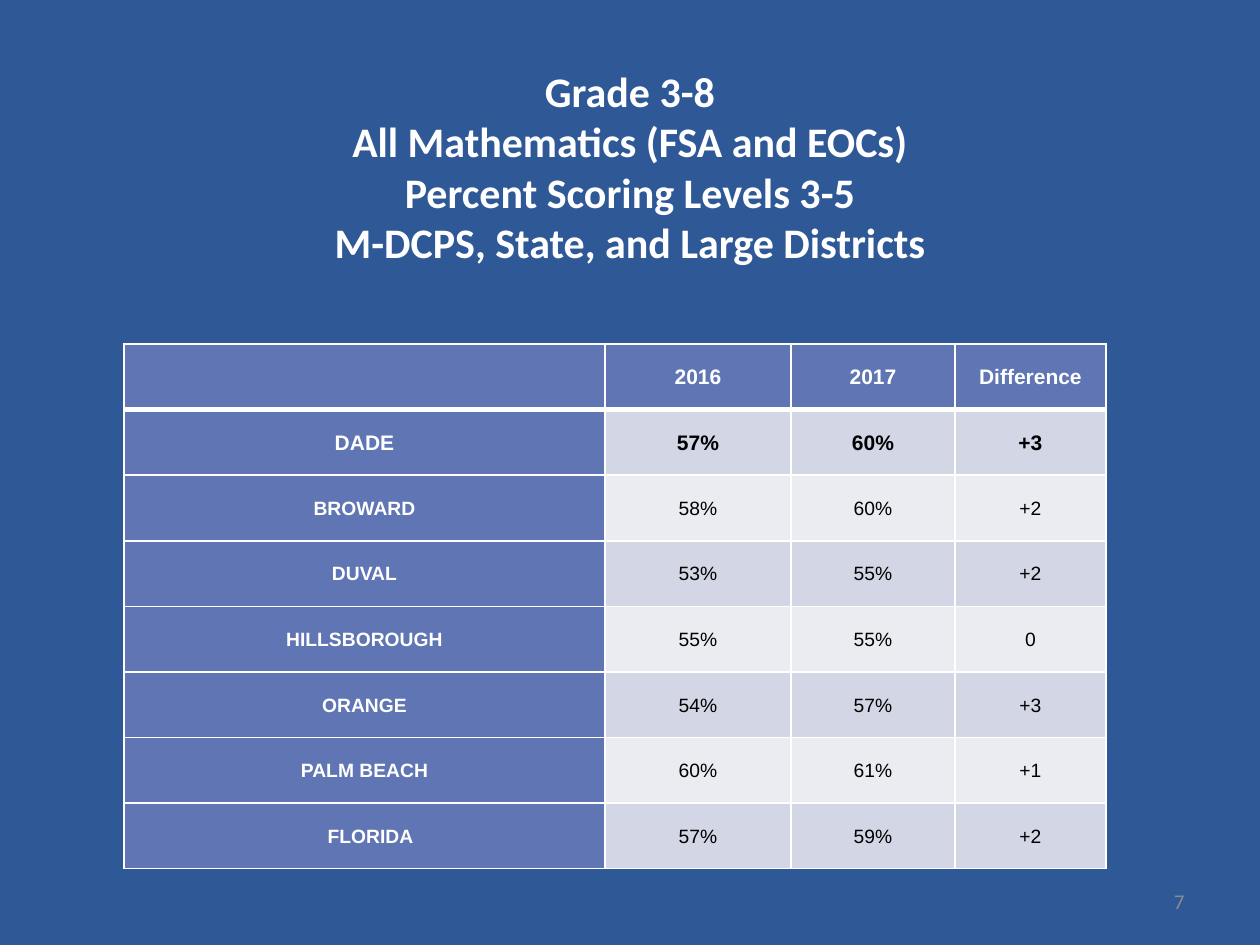
import pptx
import pptx.dml.color
import pptx.enum.text
import pptx.oxml.ns
import pptx.util
from dataclasses import dataclass
from lxml import etree

ALIGN = pptx.enum.text.PP_ALIGN
MIDDLE = pptx.enum.text.MSO_ANCHOR.MIDDLE


@dataclass(frozen=True)
class Theme:
    background: str = "2F5897"
    accent: str = "6076B4"
    bands: tuple = ("D2D6E5", "EAECF2")
    light: str = "FFFFFF"
    dark: str = "000000"
    muted: str = "8C8C8C"
    heading_font: str = "Calibri"
    table_font: str = "Arial"
    title_size: int = 24
    strong_size: int = 12
    body_size: int = 11
    rule: int = 1
    header_rule: int = 3


THEME = Theme()
PX_PER_INCH = 126

TITLE_LINES = (
    "Grade 3-8",
    "All Mathematics (FSA and EOCs)",
    "Percent Scoring Levels 3-5",
    "M-DCPS, State, and Large Districts",
)
HEADER = ("", "2016", "2017", "Difference")
DISTRICTS = (
    ("DADE", "57%", "60%", "+3"),
    ("BROWARD", "58%", "60%", "+2"),
    ("DUVAL", "53%", "55%", "+2"),
    ("HILLSBOROUGH", "55%", "55%", "0"),
    ("ORANGE", "54%", "57%", "+3"),
    ("PALM BEACH", "60%", "61%", "+1"),
    ("FLORIDA", "57%", "59%", "+2"),
)
COLUMN_WIDTHS = (481, 186, 164, 151)
TABLE_HEIGHT = 525
CELL_INSET = 9
STATE_INDENT = 12


def px(length):
    return pptx.util.Emu(round(length * 914400 / PX_PER_INCH))


def rgb(value):
    return pptx.dml.color.RGBColor.from_string(value)


def set_all(target, values):
    for name, value in values.items():
        setattr(target, name, value)


def style_font(font, face, size, color, bold=False):
    set_all(font, {"name": face, "size": pptx.util.Pt(size), "bold": bold})
    font.color.rgb = rgb(color)


def add_text(slide, box, text, align, **font):
    frame = slide.shapes.add_textbox(*map(px, box)).text_frame
    set_all(frame, {"word_wrap": True, "vertical_anchor": MIDDLE})
    paragraph = frame.paragraphs[0]
    set_all(paragraph, {"text": text, "alignment": align})
    for run in paragraph.runs:
        style_font(run.font, **font)


def add_borders(cell, widths):
    """Draw cell borders; call before filling, as lines precede the fill in the XML."""
    properties = cell._tc.get_or_add_tcPr()
    for side, width in widths.items():
        line = etree.SubElement(properties, pptx.oxml.ns.qn(f"a:ln{side}"),
                                w=str(pptx.util.Pt(width)))
        fill = etree.SubElement(line, pptx.oxml.ns.qn("a:solidFill"))
        etree.SubElement(fill, pptx.oxml.ns.qn("a:srgbClr"), val=THEME.light)


def format_cell(cell, text, fill, size, color, bold, widths, indent=0):
    add_borders(cell, widths)
    cell.fill.solid()
    cell.fill.fore_color.rgb = rgb(fill)
    set_all(cell, {
        "vertical_anchor": MIDDLE,
        "margin_left": px(CELL_INSET + indent), "margin_right": px(CELL_INSET),
        "margin_top": 0, "margin_bottom": 0,
    })
    paragraph = cell.text_frame.paragraphs[0]
    set_all(paragraph, {"text": text, "alignment": ALIGN.CENTER, "line_spacing": 1.07})
    style_font(paragraph.runs[0].font if text else paragraph.font,
               THEME.table_font, size, color, bold)


def add_score_table(slide, left, top):
    rows = (HEADER, *DISTRICTS)
    table = slide.shapes.add_table(
        len(rows), len(HEADER), px(left), px(top),
        px(sum(COLUMN_WIDTHS)), px(TABLE_HEIGHT)).table
    for column, width in zip(table.columns, COLUMN_WIDTHS):
        column.width = px(width)
    for r, values in enumerate(rows):
        table.rows[r].height = px(TABLE_HEIGHT / len(rows))
        strong = r <= 1  # the header and the home district
        widths = dict.fromkeys("LRTB", THEME.rule)
        if strong:
            widths["T" if r else "B"] = THEME.header_rule
        for c, text in enumerate(values):
            label = r == 0 or c == 0
            format_cell(
                table.cell(r, c), text,
                fill=THEME.accent if label else THEME.bands[(r - 1) % 2],
                size=THEME.strong_size if strong else THEME.body_size,
                color=THEME.light if label else THEME.dark,
                bold=label or strong,
                widths=widths,
                indent=STATE_INDENT if text == "FLORIDA" else 0)


def main():
    deck = pptx.Presentation()
    set_all(deck, {"slide_width": px(1260), "slide_height": px(945)})
    slide = deck.slides.add_slide(deck.slide_layouts[6])
    slide.background.fill.solid()
    slide.background.fill.fore_color.rgb = rgb(THEME.background)

    add_text(slide, (63, 38, 1134, 256), "\v".join(TITLE_LINES), ALIGN.CENTER,
             face=THEME.heading_font, size=THEME.title_size,
             color=THEME.light, bold=True)
    add_score_table(slide, 124, 344)
    add_text(slide, (903, 876, 294, 50), "7", ALIGN.RIGHT,
             face=THEME.heading_font, size=THEME.strong_size, color=THEME.muted)
    deck.save("out.pptx")


if __name__ == "__main__":
    main()
